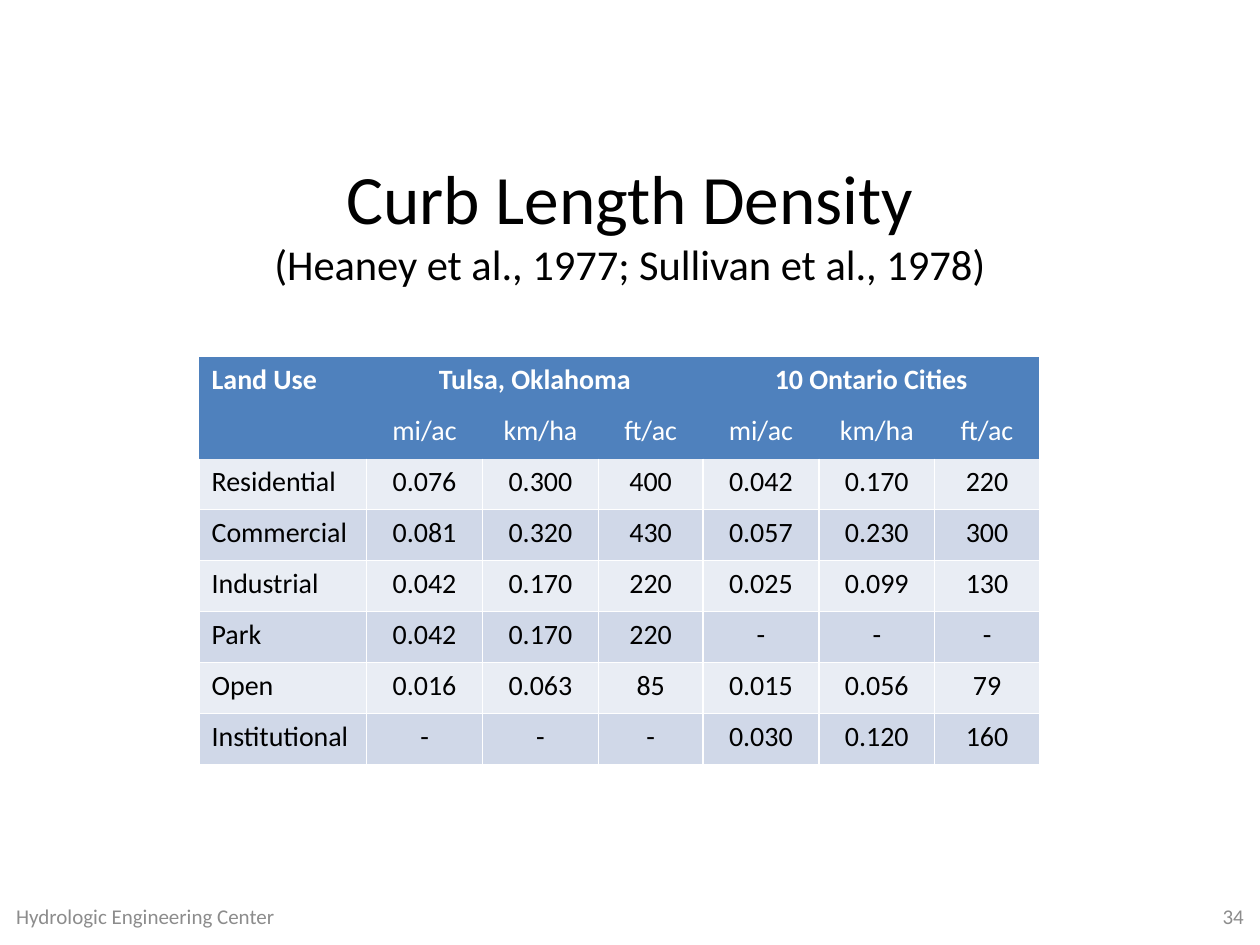
from dataclasses import dataclass

from lxml.etree import SubElement
from pptx import Presentation
from pptx.dml.color import RGBColor
from pptx.enum.text import MSO_ANCHOR, MSO_AUTO_SIZE, PP_ALIGN
from pptx.oxml.ns import qn
from pptx.util import Inches, Pt


@dataclass(frozen=True)
class Theme:
    font: str = "Calibri"
    title_size: float = 39.6
    subtitle_size: float = 24.3
    table_size: float = 16
    footer_size: float = 12
    text: str = "000000"
    muted: str = "8C8C8C"
    header: str = "4F81BD"
    on_header: str = "FFFFFF"
    bands: tuple = ("E9EDF4", "D0D8E8")
    border: str = "FFFFFF"


THEME = Theme()

UNITS = ["mi/ac", "km/ha", "ft/ac"]
LAND_USES = [
    ["Residential", "0.076", "0.300", "400", "0.042", "0.170", "220"],
    ["Commercial", "0.081", "0.320", "430", "0.057", "0.230", "300"],
    ["Industrial", "0.042", "0.170", "220", "0.025", "0.099", "130"],
    ["Park", "0.042", "0.170", "220", "-", "-", "-"],
    ["Open", "0.016", "0.063", "85", "0.015", "0.056", "79"],
    ["Institutional", "-", "-", "-", "0.030", "0.120", "160"],
]


def write(p, text, size, color=THEME.text, bold=False, align=PP_ALIGN.LEFT):
    """Append one formatted run to a paragraph."""
    p.alignment = align
    r = p.add_run()
    r.text = text
    r.font.name = THEME.font
    r.font.size = Pt(size)
    r.font.bold = bold
    r.font.color.rgb = RGBColor.from_string(color)


def place(sp, box):
    sp.left, sp.top, sp.width, sp.height = (Inches(v) for v in box)


def add_title(s, box, title, citation):
    sp = s.shapes.title
    place(sp, box)
    tf = sp.text_frame
    tf.auto_size = MSO_AUTO_SIZE.NONE
    tf.vertical_anchor = MSO_ANCHOR.MIDDLE
    p = tf.paragraphs[0]
    write(p, title, THEME.title_size, align=PP_ALIGN.CENTER)
    p.add_line_break()
    write(p, citation, THEME.subtitle_size, align=PP_ALIGN.CENTER)


def add_footer_text(s, box, text, align):
    sp = s.shapes.add_textbox(*(Inches(v) for v in box))
    tf = sp.text_frame
    tf.word_wrap = True
    tf.vertical_anchor = MSO_ANCHOR.MIDDLE
    write(tf.paragraphs[0], text, THEME.footer_size, THEME.muted, align=align)


def set_borders(cell, visible_sides):
    """Draw the named sides (of L, R, T, B) and clear the others."""
    tc_pr = cell._tc.get_or_add_tcPr()
    for side in "LRTB":
        ln = SubElement(tc_pr, qn(f"a:ln{side}"), w=str(Pt(1)))
        if side in visible_sides:
            fill = SubElement(ln, qn("a:solidFill"))
            SubElement(fill, qn("a:srgbClr"), val=THEME.border)
        else:
            SubElement(ln, qn("a:noFill"))


def add_density_table(s, box):
    rows = [
        ["Land Use", "Tulsa, Oklahoma", "", "", "10 Ontario Cities", "", ""],
        [""] + UNITS * 2,
        *LAND_USES,
    ]
    frame = s.shapes.add_table(len(rows), len(rows[0]), *(Inches(v) for v in box))
    table = frame.table
    widths = [1.33] + [0.92, 0.92, 0.83] * 2
    for col, width in zip(table.columns, widths):
        col.width = Inches(width)
    for row in table.rows:
        row.height = Inches(box[3] / len(rows))

    # Header spans: land use down two rows, each place over its three units
    table.cell(0, 0).merge(table.cell(1, 0))
    for first in (1, 4):
        table.cell(0, first).merge(table.cell(0, first + 2))

    for i, values in enumerate(rows):
        is_header = i < 2
        for j, value in enumerate(values):
            cell = table.cell(i, j)
            set_borders(cell, "" if is_header else "LRB" if i == 2 else "LRTB")
            cell.fill.solid()
            cell.fill.fore_color.rgb = RGBColor.from_string(
                THEME.header if is_header else THEME.bands[i % 2])
            if value:
                write(cell.text_frame.paragraphs[0], value, THEME.table_size,
                      color=THEME.on_header if is_header else THEME.text,
                      bold=i == 0,
                      align=PP_ALIGN.CENTER if j else PP_ALIGN.LEFT)


def main():
    prs = Presentation()
    prs.slide_width, prs.slide_height = Inches(10), Inches(7.5)
    s = prs.slides.add_slide(prs.slide_layouts[5])  # title only

    add_title(s, (0.5, 1.14, 9, 1.25), "Curb Length Density",
              "(Heaney et al., 1977; Sullivan et al., 1978)")
    add_footer_text(s, (0.03, 7.07, 3.17, 0.4),
                    "Hydrologic Engineering Center", PP_ALIGN.LEFT)
    add_footer_text(s, (7.64, 7.07, 2.33, 0.4), "34", PP_ALIGN.RIGHT)
    add_density_table(s, (1.58, 2.83, 6.67, 3.24))

    prs.save("out.pptx")


if __name__ == "__main__":
    main()
